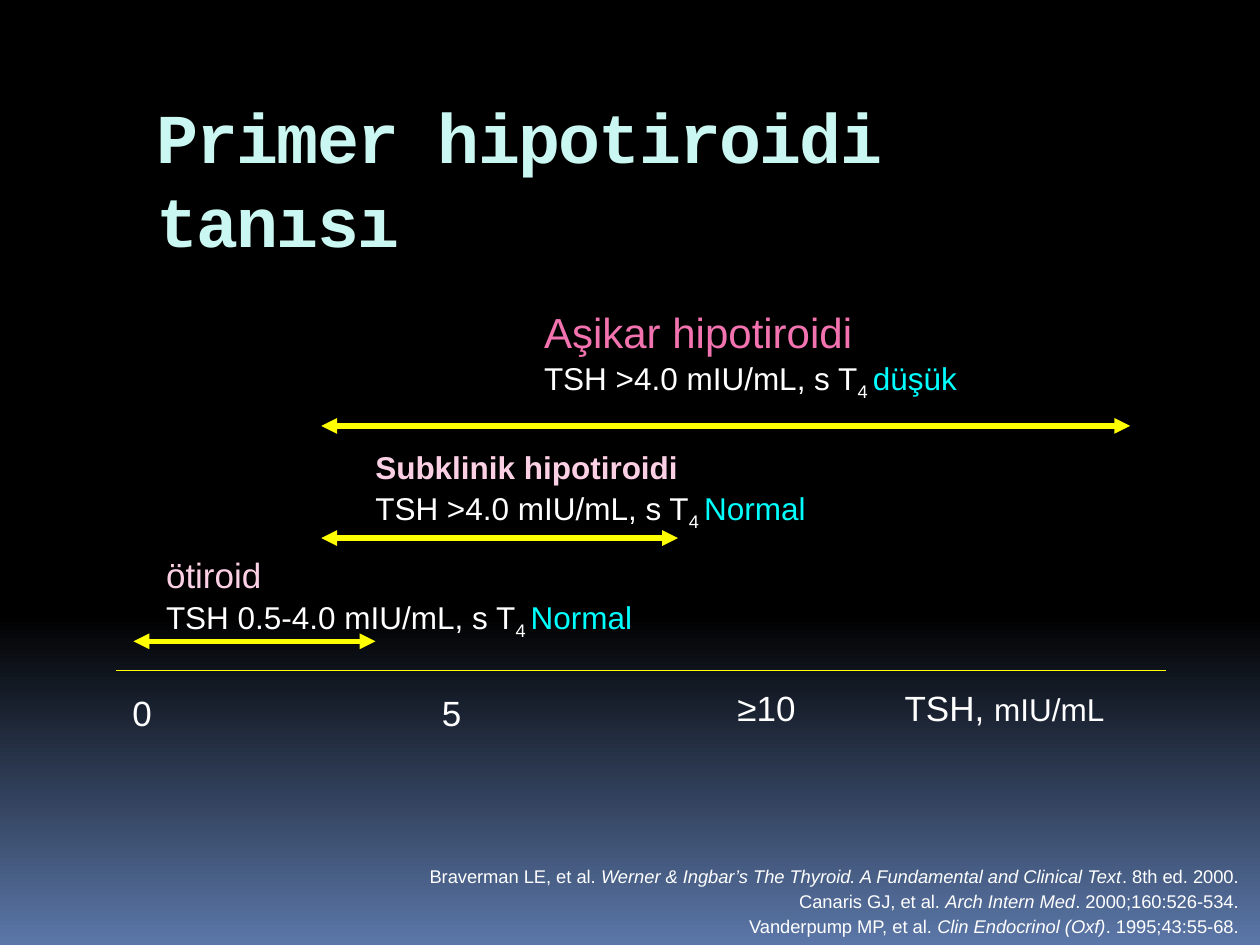
from lxml import etree
from pptx import Presentation
from pptx.dml.color import RGBColor
from pptx.enum.shapes import MSO_CONNECTOR
from pptx.enum.text import MSO_ANCHOR, MSO_AUTO_SIZE, PP_ALIGN
from pptx.oxml.ns import qn
from pptx.util import Pt

LEFT, CENTER, RIGHT = PP_ALIGN.LEFT, PP_ALIGN.CENTER, PP_ALIGN.RIGHT
STRAIGHT = MSO_CONNECTOR.STRAIGHT
TITLE_ONLY = 5

COLORS = {
    "black": "000000",
    "blue": "5B77A8",
    "title": "CAF7F1",
    "white": "FFFFFF",
    "pale_pink": "FBD0E4",
    "pink": "F273AF",
    "cyan": "00FFFF",
    "yellow": "FFFF00",
}


def rgb(name):
    return RGBColor.from_string(COLORS[name])


def paint_background(slide):
    fill = slide.background.fill
    fill.gradient()
    fill.gradient_angle = 270
    for stop, position, color in zip(fill.gradient_stops, (0.65, 1), ("black", "blue")):
        stop.position = position
        stop.color.rgb = rgb(color)


def add_run(paragraph, text, size, color="white", bold=False, italic=False, subscript=False):
    run = paragraph.add_run()
    run.text = text
    font = run.font
    font.name, font.size, font.bold, font.italic = "Arial", Pt(size), bold, italic
    font.color.rgb = rgb(color)
    if subscript:
        run._r.get_or_add_rPr().set("baseline", "-25000")


def add_text(slide, box, paragraphs, align=LEFT, space_before=0):
    """Add a text box; each paragraph is a list of (text, size, run options)."""
    shape = slide.shapes.add_textbox(*(Pt(length) for length in box))
    text_frame = shape.text_frame
    text_frame.word_wrap = True
    text_frame.auto_size = MSO_AUTO_SIZE.SHAPE_TO_FIT_TEXT
    for index, runs in enumerate(paragraphs):
        paragraph = text_frame.add_paragraph() if index else text_frame.paragraphs[0]
        paragraph.alignment = align
        paragraph.space_before = Pt(space_before)
        for text, size, options in runs:
            add_run(paragraph, text, size, **options)


def add_horizontal_line(slide, left, right, y, width, arrows=False):
    line = slide.shapes.add_connector(STRAIGHT, Pt(left), Pt(y), Pt(right), Pt(y))
    line.line.color.rgb = rgb("yellow")
    line.line.width = Pt(width)
    if arrows:
        line_properties = line.line._get_or_add_ln()
        for end in ("a:headEnd", "a:tailEnd"):
            etree.SubElement(line_properties, qn(end), type="triangle")
    etree.SubElement(line._element.spPr, qn("a:effectLst"))


def fill_title(slide, left, top, width, height):
    title = slide.shapes.title
    title.left, title.top, title.width, title.height = map(Pt, (left, top, width, height))
    text_frame = title.text_frame
    text_frame.text = "Primer hipotiroidi tanısı"
    text_frame.word_wrap = True
    text_frame.auto_size = MSO_AUTO_SIZE.NONE
    text_frame.vertical_anchor = MSO_ANCHOR.TOP
    text_frame.margin_top = Pt(8.7)
    paragraph = text_frame.paragraphs[0]
    paragraph.alignment = LEFT
    paragraph.line_spacing = Pt(48.5)
    run = paragraph.runs[0]
    run.font.name, run.font.size, run.font.bold = "Courier New", Pt(40), True
    run.font.color.rgb = rgb("title")
    run._r.get_or_add_rPr().set("spc", "-100")


def add_diagnosis(slide, box, heading, tsh, t4, arrow):
    """Add a diagnosis with its criteria; arrow is (left, right, y) from the box corner."""
    criteria = [
        (f"TSH {tsh} mIU/mL, s T", 18, {}),
        ("4 ", 18, {"subscript": True}),
        (t4, 18, {"color": "cyan"}),
    ]
    add_text(slide, box, [[heading], criteria], space_before=1.6)
    left, top = box[:2]
    start, end, y = arrow
    add_horizontal_line(slide, left + start, left + end, top + y, 3, arrows=True)


def add_tsh_axis(slide, left, top, width):
    add_horizontal_line(slide, left, left + width, top, 0.75)
    ticks = [("0", 0, 8.6, 30.2), ("5", 167.8, 8.6, 48.2), ("≥10", 342, 5.8, 59.8)]
    for label, x, y, label_width in ticks:
        add_text(slide, (left + x, top + y, label_width, 31), [[(label, 20, {})]], CENTER)
    unit = [("TSH, ", 20, {}), ("mIU/mL", 18, {})]
    add_text(slide, (left + 443.6, top + 5.8, 156.4, 31), [unit])


def add_references(slide, box):
    references = [
        ("Braverman LE, et al. ",
         "Werner & Ingbar’s The Thyroid. A Fundamental and Clinical Text", ". 8th ed. 2000."),
        ("Canaris GJ, et al. ", "Arch Intern Med", ". 2000;160:526-534."),
        ("Vanderpump MP, et al. ", "Clin Endocrinol (Oxf)", ". 1995;43:55-68."),
    ]
    paragraphs = [
        [(authors, 10.5, {}), (source, 10.5, {"italic": True}), (details, 10.5, {})]
        for authors, source, details in references
    ]
    add_text(slide, box, paragraphs, RIGHT, space_before=1.6)


def main():
    presentation = Presentation()
    presentation.slide_width, presentation.slide_height = Pt(720), Pt(540)
    slide = presentation.slides.add_slide(presentation.slide_layouts[TITLE_ONLY])
    paint_background(slide)
    fill_title(slide, 82, 44, 556, 90)
    add_diagnosis(slide, (303.8, 171.4, 301, 59),
                  ("Aşikar hipotiroidi", 24, {"color": "pink"}),
                  ">4.0", "düşük", (-120.2, 342, 72))
    add_diagnosis(slide, (207.4, 252.7, 330, 52),
                  ("Subklinik hipotiroidi", 18, {"color": "pale_pink", "bold": True}),
                  ">4.0", "Normal", (-23.8, 180, 54.8))
    add_diagnosis(slide, (87.8, 312.5, 348, 55),
                  ("ötiroid", 20, {"color": "pale_pink"}),
                  "0.5-4.0", "Normal", (-11.5, 126.8, 54))
    add_tsh_axis(slide, 66.2, 383, 600)
    add_references(slide, (41.8, 491, 673.2, 48.2))
    presentation.save("out.pptx")


if __name__ == "__main__":
    main()
